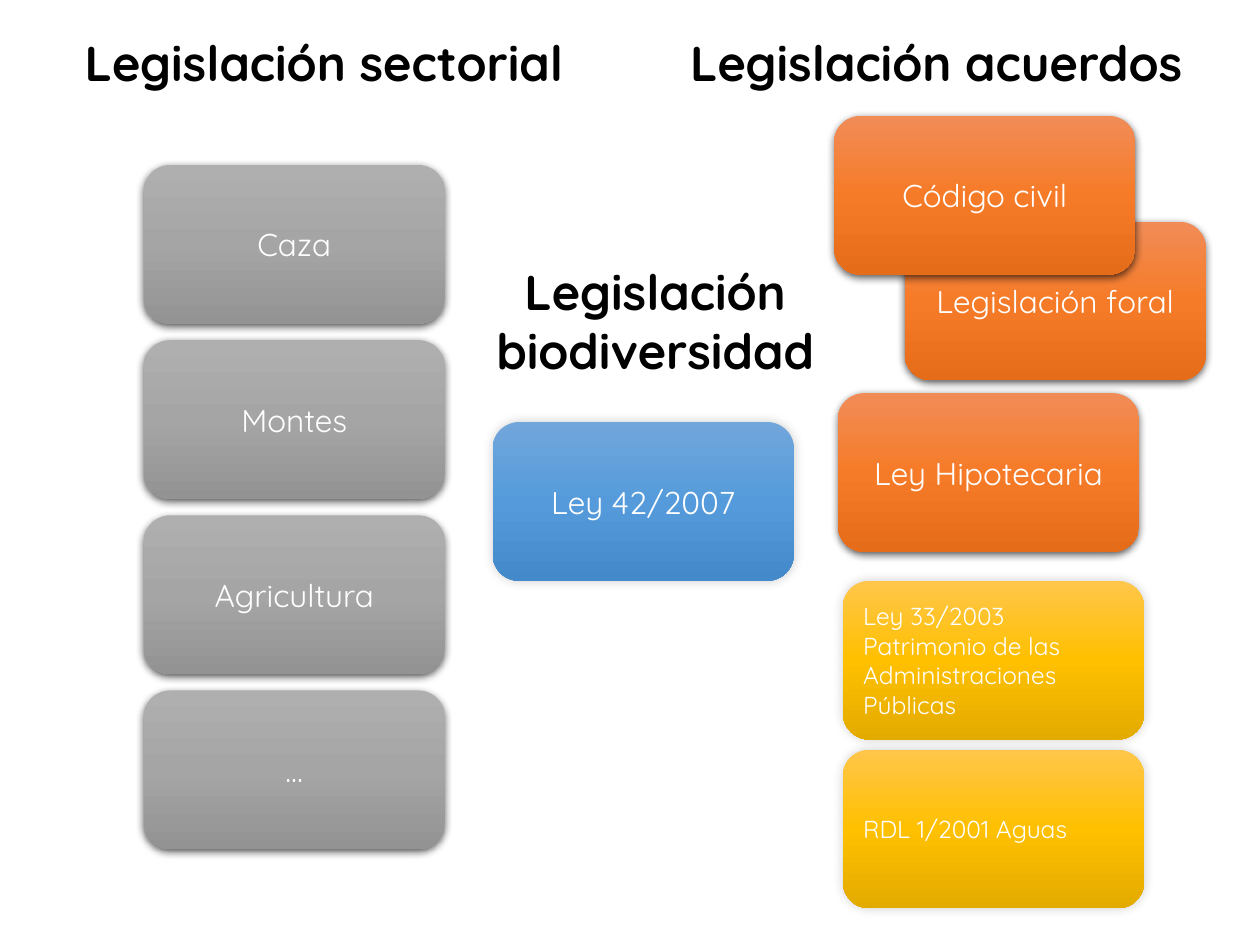
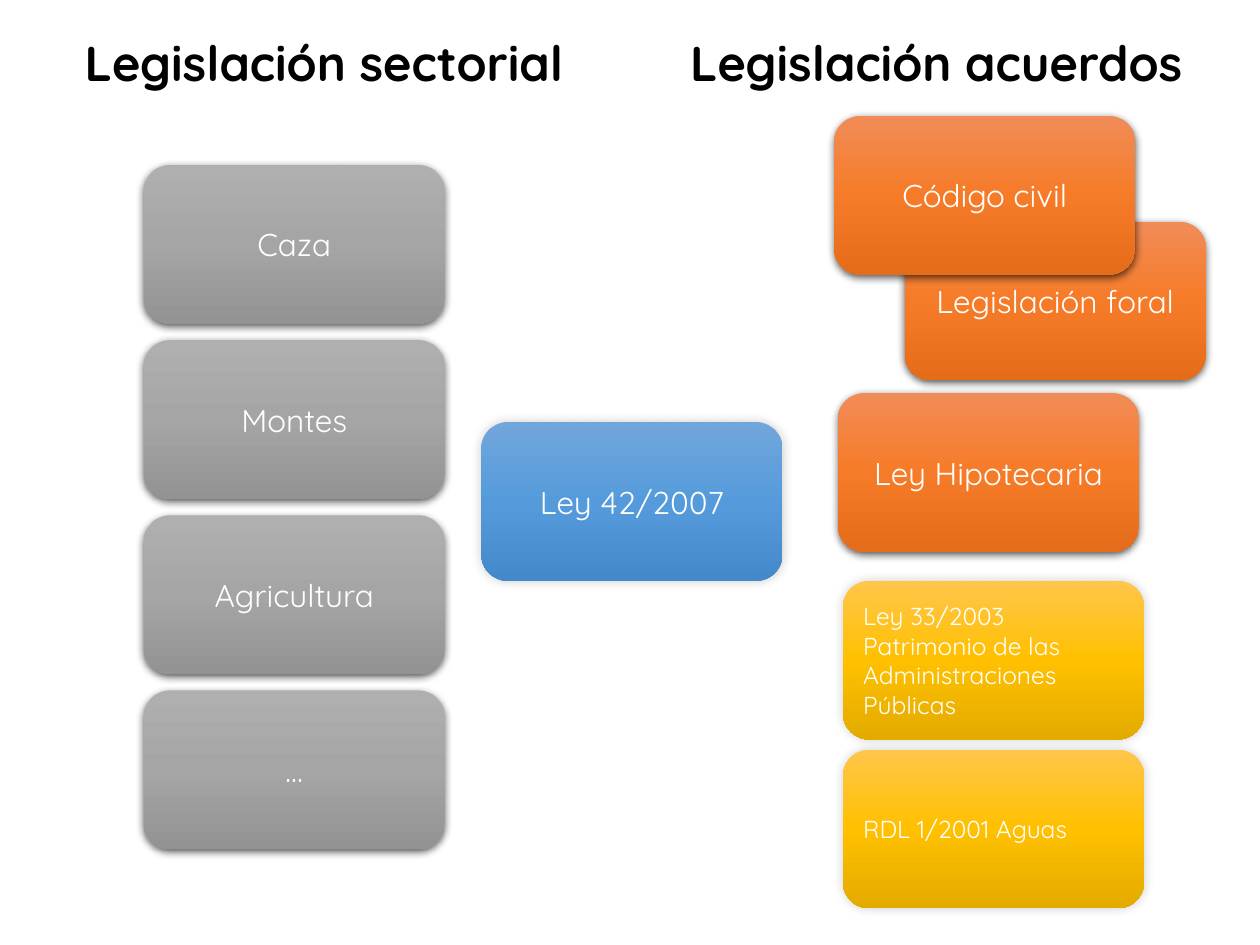
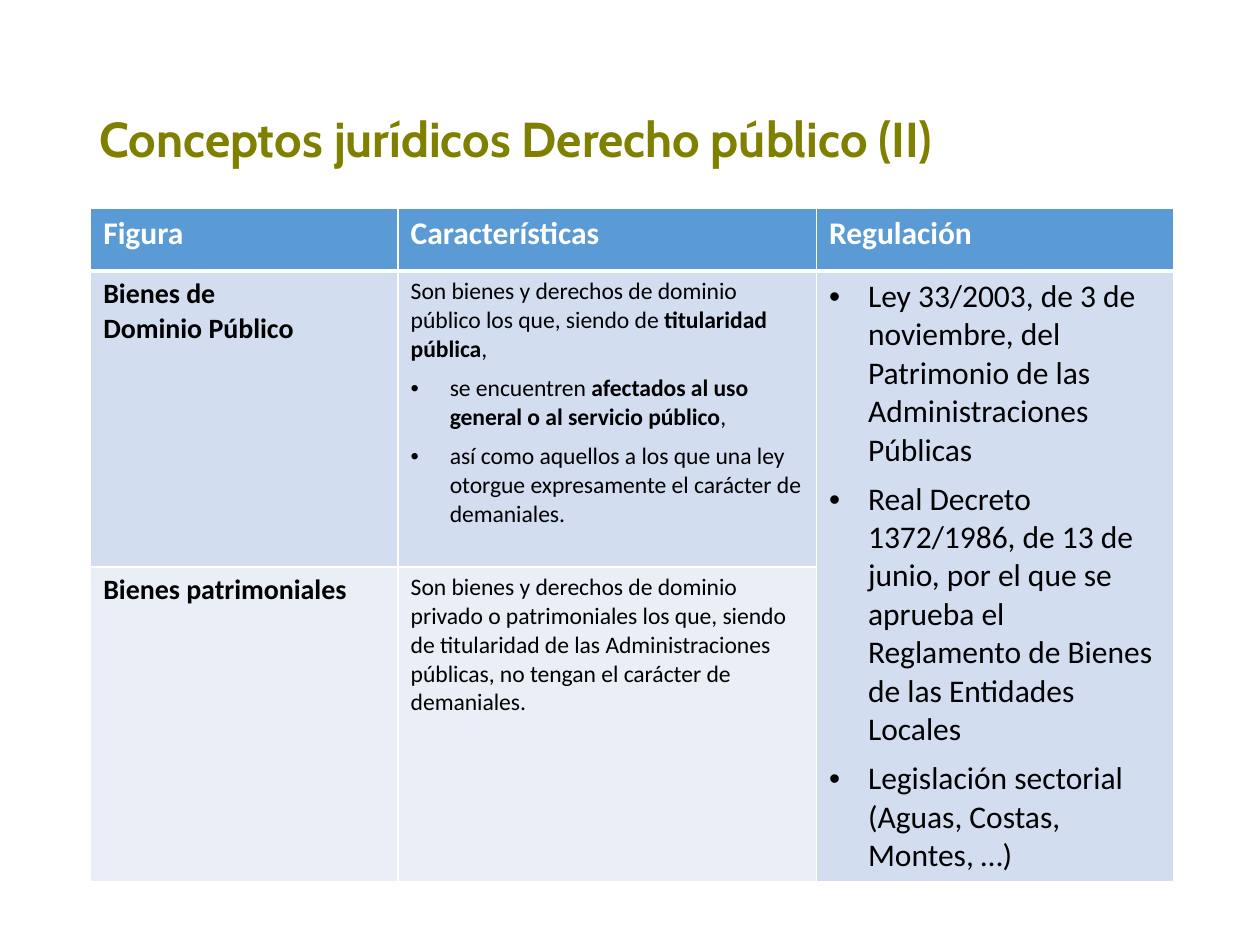
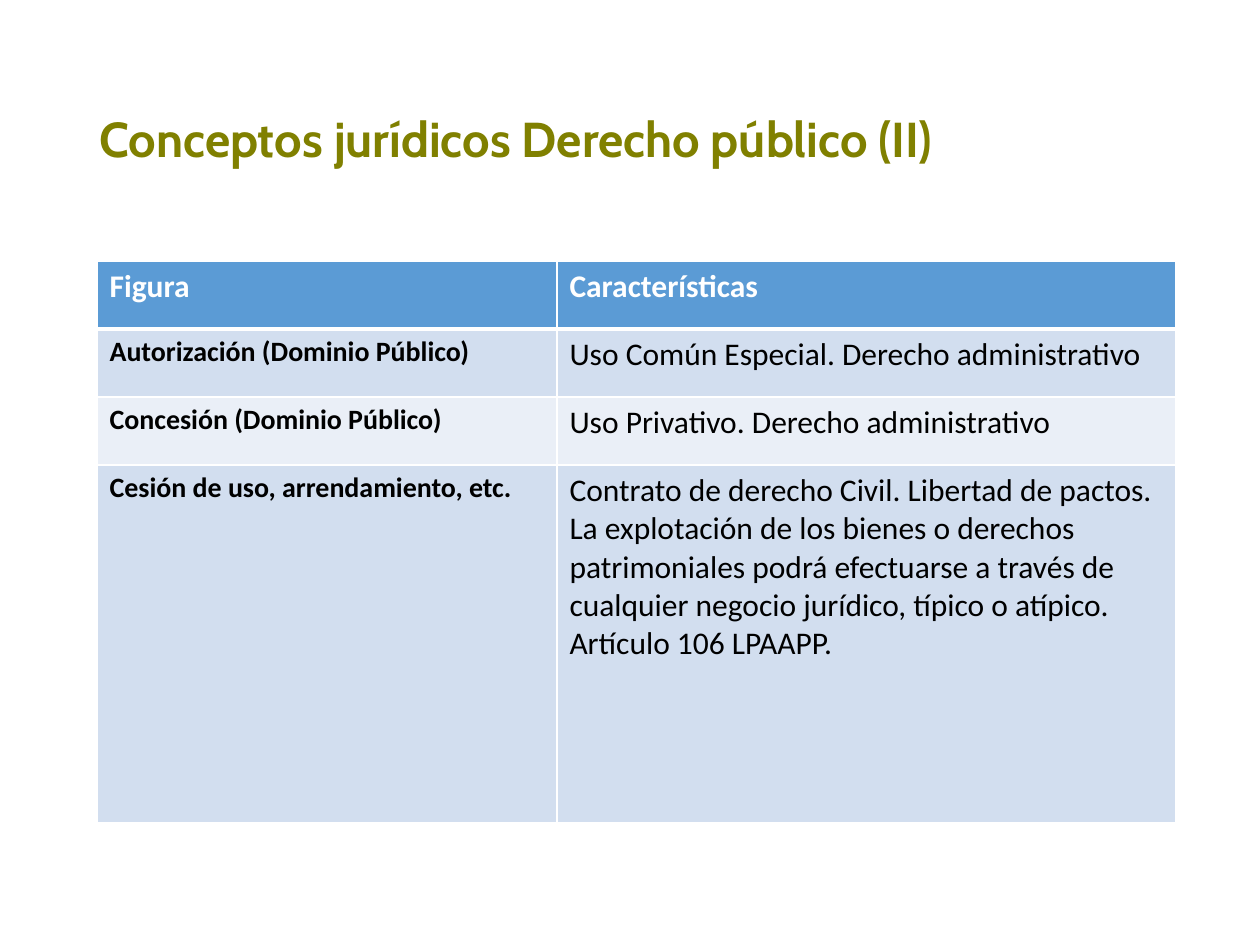
from dataclasses import dataclass

from lxml import etree
from pptx import Presentation
from pptx.dml.color import RGBColor
from pptx.enum.shapes import MSO_SHAPE
from pptx.enum.text import MSO_ANCHOR, MSO_AUTO_SIZE, PP_ALIGN
from pptx.oxml.ns import qn
from pptx.util import Emu, Inches, Pt

ROUNDED = MSO_SHAPE.ROUNDED_RECTANGLE
MIDDLE = MSO_ANCHOR.MIDDLE
GROW = MSO_AUTO_SIZE.SHAPE_TO_FIT_TEXT
FIXED = MSO_AUTO_SIZE.NONE
LEFT = PP_ALIGN.LEFT
CENTER = PP_ALIGN.CENTER

SLIDE_WIDTH = Inches(10)
SLIDE_HEIGHT = Inches(7.5)
COLUMN = SLIDE_WIDTH / 100
ROW = SLIDE_HEIGHT / 75
CARD_WIDTH = 23.9
CARD_HEIGHT = 12.6
CARD_STEP = 13.9
INDENT = Inches(0.31)
TITLE_ONLY = 5
BLANK = 6

DIAGRAM_FONT = "Quicksand"
TITLE_FONT = "Cabin"
TABLE_FONT = "Calibri"

WHITE = RGBColor(0xFF, 0xFF, 0xFF)
BLACK = RGBColor(0x00, 0x00, 0x00)
OLIVE = RGBColor(0x80, 0x80, 0x00)
HEADER_BLUE = RGBColor(0x5B, 0x9B, 0xD5)
BAND_DARK = RGBColor(0xD2, 0xDE, 0xEF)
BAND_LIGHT = RGBColor(0xEA, 0xEF, 0xF7)
GRAYS = (RGBColor(0xAF, 0xAF, 0xAF), RGBColor(0xA5, 0xA5, 0xA5), RGBColor(0x93, 0x93, 0x93))
ORANGES = (RGBColor(0xF1, 0x8C, 0x57), RGBColor(0xF6, 0x7B, 0x28), RGBColor(0xE5, 0x6C, 0x19))
BLUES = (RGBColor(0x71, 0xA6, 0xDB), RGBColor(0x55, 0x9B, 0xDB), RGBColor(0x44, 0x8A, 0xCA))
YELLOWS = (RGBColor(0xFF, 0xC6, 0x4B), RGBColor(0xFF, 0xC0, 0x00), RGBColor(0xE3, 0xAB, 0x00))


@dataclass
class Shadow:
    opacity: int
    blur: float
    distance: float
    angle: int


STRONG_SHADOW = Shadow(63, 4.5, 1.5, 90)
SOFT_SHADOW = Shadow(20, 6, 0, 315)


@dataclass
class Box:
    left: float
    top: float
    width: float
    height: float

    def inner(self, left, top, width, height):
        return Box(self.left + left, self.top + top, width, height)

    def place(self):
        return (Emu(round(self.left * COLUMN)), Emu(round(self.top * ROW)),
                Emu(round(self.width * COLUMN)), Emu(round(self.height * ROW)))


def add_element(parent, tag, **attributes):
    element = etree.SubElement(parent, qn(tag))
    for name, value in attributes.items():
        element.set(name, str(value))
    return element


def add_bullet(para):
    properties = para._p.get_or_add_pPr()
    properties.set("marL", str(INDENT))
    properties.set("indent", str(-INDENT))
    add_element(properties, "a:buFont", typeface="Arial")
    add_element(properties, "a:buChar", char="•")


def write_text(frame, *texts, font, size, color, bold=False, align=LEFT, gap=0, leading=None):
    for index, text in enumerate(texts):
        para = frame.add_paragraph() if index else frame.paragraphs[0]
        if text.startswith("• "):
            add_bullet(para)
            text = text[2:]
        para.alignment = align
        if index and gap:
            para.space_before = Pt(gap)
        if leading:
            para.line_spacing = leading
        for position, piece in enumerate(text.split("*")):
            span = para.add_run()
            span.text = piece
            span.font.name = font
            span.font.size = Pt(size)
            span.font.bold = bold or position % 2 == 1
            span.font.color.rgb = color


def set_gradient(shape, colors):
    shape.fill.gradient()
    shape.fill.gradient_angle = 270
    stops = shape._element.spPr.find(".//" + qn("a:gsLst"))
    stops.clear()
    for index, color in enumerate(colors):
        stop = add_element(stops, "a:gs", pos=index * 50000)
        add_element(stop, "a:srgbClr", val=color)


def set_shadow(shape, shadow):
    shape.shadow.inherit = False
    effects = shape._element.spPr.find(qn("a:effectLst"))
    outer = add_element(effects, "a:outerShdw", blurRad=Pt(shadow.blur), dist=Pt(shadow.distance),
                        dir=shadow.angle * 60000, algn="ctr", rotWithShape=0)
    color = add_element(outer, "a:srgbClr", val=BLACK)
    add_element(color, "a:alpha", val=shadow.opacity * 1000)


def add_card(page, box, left, top, text, colors, shadow, size=18, align=CENTER):
    card = page.shapes.add_shape(ROUNDED, *box.inner(left, top, CARD_WIDTH, CARD_HEIGHT).place())
    set_gradient(card, colors)
    card.line.fill.background()
    set_shadow(card, shadow)
    card.text_frame.word_wrap = True
    card.text_frame.vertical_anchor = MIDDLE
    write_text(card.text_frame, text, font=DIAGRAM_FONT, size=size, color=WHITE, align=align)


def add_heading(page, box, text, height=5.7):
    heading = page.shapes.add_textbox(*box.inner(0, 0, box.width, height).place())
    heading.text_frame.word_wrap = True
    heading.text_frame.auto_size = GROW
    write_text(heading.text_frame, text, font=DIAGRAM_FONT, size=28, color=BLACK,
               bold=True, align=CENTER)


def add_sector_laws(page, box):
    add_heading(page, box, "Legislación sectorial")
    for index, law in enumerate(("Caza", "Montes", "Agricultura", "…")):
        add_card(page, box, 7.6, 11 + index * CARD_STEP, law, GRAYS, STRONG_SHADOW)


def add_agreement_laws(page, box):
    add_heading(page, box, "Legislación acuerdos")
    for left, top, law in ((21.2, 15.5, "Legislación foral"),
                           (15.6, 7.1, "Código civil"),
                           (15.9, 29.1, "Ley Hipotecaria")):
        add_card(page, box, left, top, law, ORANGES, STRONG_SHADOW)
    for top, law in ((44, "Ley 33/2003 Patrimonio de las Administraciones Públicas"),
                     (57.4, "RDL 1/2001 Aguas")):
        add_card(page, box, 16.3, top, law, YELLOWS, SOFT_SHADOW, size=14, align=LEFT)


def add_biodiversity_law(page, box, with_heading):
    if with_heading:
        add_heading(page, box, "Legislación biodiversidad", height=10.4)
    add_card(page, box, 10.8 if with_heading else 9.9, 13.2, "Ley 42/2007", BLUES, SOFT_SHADOW)


def add_diagram_slide(deck, with_heading):
    page = deck.slides.add_slide(deck.slide_layouts[BLANK])
    add_sector_laws(page, Box(3.8, 2.1, 43.8, 65.5))
    add_agreement_laws(page, Box(50.6, 2.1, 47.4, 70))
    add_biodiversity_law(page, Box(28.3, 20.3, 47.4, 25.8), with_heading)


def set_borders(cell, top, bottom):
    properties = cell._tc.get_or_add_tcPr()
    sides = (("a:lnL", 1), ("a:lnR", 1), ("a:lnT", top), ("a:lnB", bottom))
    for index, (tag, width) in enumerate(sides):
        line = add_element(properties, tag, w=Pt(width))
        add_element(add_element(line, "a:solidFill"), "a:srgbClr", val=WHITE)
        properties.insert(index, line)


def add_law_table(page, box, widths, heights, header, rows, sizes):
    frame = page.shapes.add_table(len(heights), len(widths), *box.place())
    table = frame.table
    for column, width in zip(table.columns, widths):
        column.width = Emu(round(width * COLUMN))
    for row, height in zip(table.rows, heights):
        row.height = Emu(round(height * ROW))
    for row_index, texts in enumerate([header] + rows):
        is_header = row_index == 0
        fill = HEADER_BLUE if is_header else BAND_DARK if row_index % 2 else BAND_LIGHT
        for column_index, text in enumerate(texts):
            cell = table.cell(row_index, column_index)
            cell.fill.solid()
            cell.fill.fore_color.rgb = fill
            set_borders(cell, 3 if row_index == 1 else 1, 3 if is_header else 1)
            if not text:
                continue
            paras = [text] if isinstance(text, str) else text
            write_text(cell.text_frame, *paras, font=TABLE_FONT,
                       size=18 if is_header else sizes[column_index],
                       color=WHITE if is_header else BLACK,
                       bold=is_header or column_index == 0,
                       gap=6 if any(para.startswith("• ") for para in paras) else 0)
    return table


def add_concept_slide(deck, box, **content):
    page = deck.slides.add_slide(deck.slide_layouts[TITLE_ONLY])
    title = page.shapes.title
    title.left, title.top, title.width, title.height = Box(6.9, 4, 86.2, 14.5).place()
    title.text_frame.auto_size = FIXED
    title.text_frame.vertical_anchor = MIDDLE
    write_text(title.text_frame, "Conceptos jurídicos Derecho público (II)", font=TITLE_FONT,
               size=28, color=OLIVE, bold=True, leading=0.9)
    return add_law_table(page, box, **content)


def add_property_slide(deck):
    table = add_concept_slide(
        deck, Box(7.2, 16.5, 86, 49.3),
        widths=(24.4, 33.2, 28.4), heights=(5, 23.5, 20.7), sizes=(16, 13.5, 18),
        header=("Figura", "Características", "Regulación"),
        rows=[
            (("Bienes de", "Dominio Público"),
             ("Son bienes y derechos de dominio público los que, siendo de *titularidad pública*,",
              "• se encuentren *afectados al uso general o al servicio público*,",
              "• así como aquellos a los que una ley otorgue expresamente el carácter de "
              "demaniales."),
             ("• Ley 33/2003, de 3 de noviembre, del Patrimonio de las Administraciones Públicas",
              "• Real Decreto 1372/1986, de 13 de junio, por el que se aprueba el Reglamento "
              "de Bienes de las Entidades Locales",
              "• Legislación sectorial (Aguas, Costas, Montes, …)")),
            ("Bienes patrimoniales",
             "Son bienes y derechos de dominio privado o patrimoniales los que, siendo de "
             "titularidad de las Administraciones públicas, no tengan el carácter de demaniales.",
             ""),
        ])
    regulation = table.cell(1, 2)
    regulation.merge(table.cell(2, 2))
    regulation.vertical_anchor = MIDDLE


def add_contract_slide(deck):
    add_concept_slide(
        deck, Box(7.7, 20.7, 85.6, 44.6),
        widths=(36.5, 49.1), heights=(5.4, 5.4, 5.4, 28.4), sizes=(16, 18),
        header=("Figura", "Características"),
        rows=[
            ("Autorización (Dominio Público)", "Uso Común Especial. Derecho administrativo"),
            ("Concesión (Dominio Público)", "Uso Privativo. Derecho administrativo"),
            ("Cesión de uso, arrendamiento, etc.",
             ("Contrato de derecho Civil. Libertad de pactos.",
              "La explotación de los bienes o derechos patrimoniales podrá efectuarse a través "
              "de cualquier negocio jurídico, típico o atípico. Artículo 106 LPAAPP.")),
        ])


def main():
    deck = Presentation()
    deck.slide_width = SLIDE_WIDTH
    deck.slide_height = SLIDE_HEIGHT
    add_diagram_slide(deck, with_heading=True)
    add_diagram_slide(deck, with_heading=False)
    add_property_slide(deck)
    add_contract_slide(deck)
    deck.save("out.pptx")


if __name__ == "__main__":
    main()
